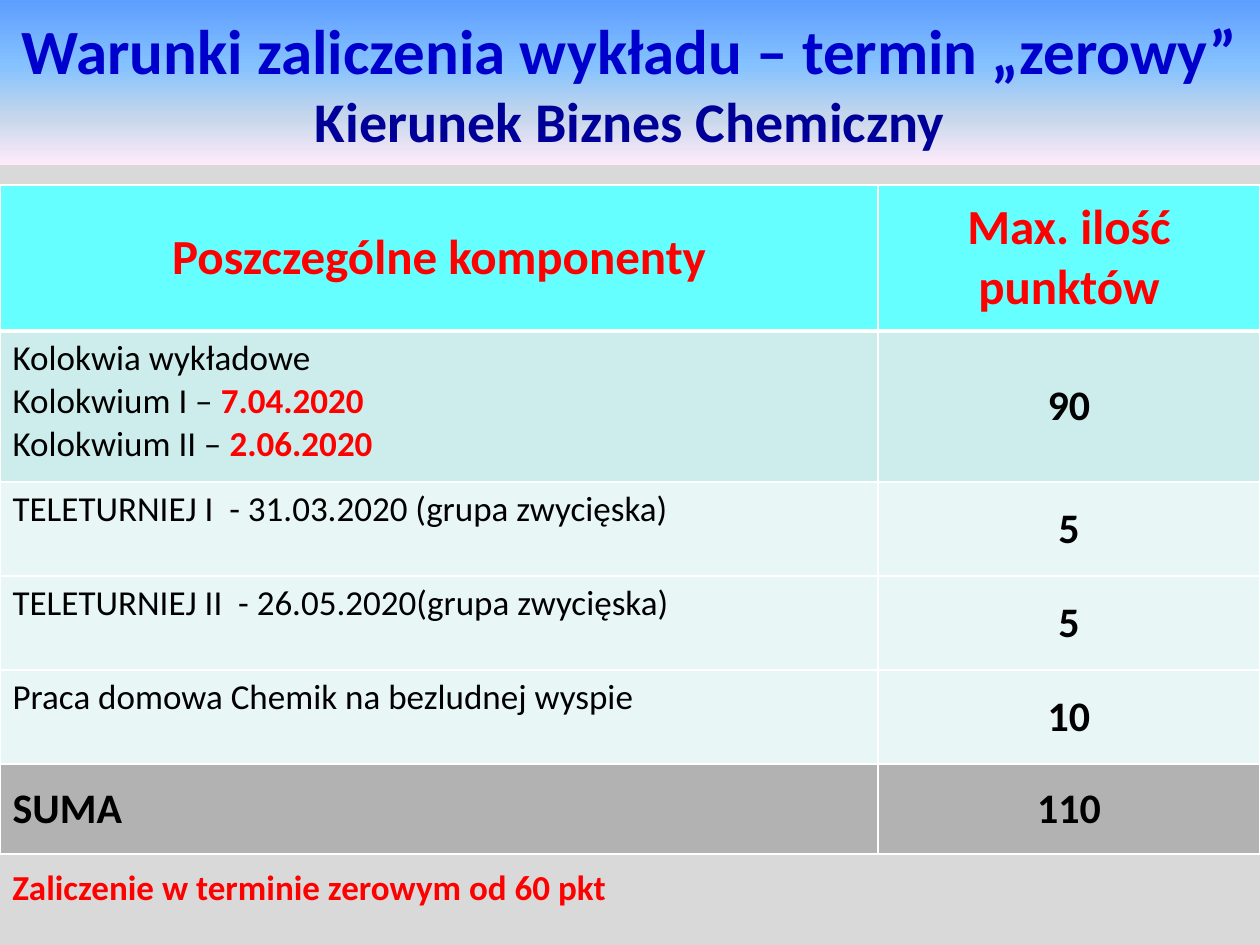
import pptx
import pptx.util
import pptx.dml.color
import pptx.enum.text
import pptx.oxml.ns
import lxml.etree

PX = 914400 // 126
HUES = {
    "back": "D9D9D9", "head": "66FFFF", "exam": "CDECEC", "quiz": "E8F6F6",
    "sum": "B2B2B2", "edge": "FFFFFF", "red": "FF0000", "black": "000000",
    "blue": "0000CC", "navy": "000099",
}
FADE = [(0, "5E9EFF"), (40, "85C2FF"), (70, "C4D6EB"), (100, "FFEBFA")]
MID = pptx.enum.text.MSO_ANCHOR.MIDDLE
TOP = pptx.enum.text.MSO_ANCHOR.TOP
LEFT = pptx.enum.text.PP_ALIGN.LEFT
CENTER = pptx.enum.text.PP_ALIGN.CENTER
rgb = pptx.dml.color.RGBColor.from_string
qn = pptx.oxml.ns.qn


def write(frame, lines, align):
    for i, line in enumerate(lines):
        para = frame.paragraphs[0] if i == 0 else frame.add_paragraph()
        para.alignment = align
        for text, size, hue, bold in line:
            run = para.add_run()
            run.text = text
            run.font.name = "Calibri"
            run.font.size = pptx.util.Pt(size)
            run.font.bold = bold
            run.font.color.rgb = rgb(HUES[hue])


def edge(cell, side, width):
    props = cell._tc.get_or_add_tcPr()
    line = lxml.etree.SubElement(props, qn("a:" + side), w=str(pptx.util.Pt(width)))
    fill = lxml.etree.SubElement(line, qn("a:solidFill"))
    lxml.etree.SubElement(fill, qn("a:srgbClr"), val=HUES["edge"])


deck = pptx.Presentation()
deck.slide_width = 1260 * PX
deck.slide_height = 945 * PX
slide = deck.slides.add_slide(deck.slide_layouts[5])
slide.background.fill.solid()
slide.background.fill.fore_color.rgb = rgb(HUES["back"])

rows = [
    (146, "head", MID, CENTER,
     [[("Poszczególne komponenty", 28, "red", True)]],
     ("Max. ilość punktów", 28, "red", True)),
    (151, "exam", TOP, LEFT,
     [[("Kolokwia wykładowe", 20, "black", False)],
      [("Kolokwium I – ", 20, "black", False), ("7.04.2020", 20, "red", True)],
      [("Kolokwium II – ", 20, "black", False), ("2.06.2020", 20, "red", True)]],
     ("90", 24, "black", True)),
    (94, "quiz", TOP, LEFT,
     [[("TELETURNIEJ I  - 31.03.2020 (grupa zwycięska)", 20, "black", False)]],
     ("5", 24, "black", True)),
    (94, "quiz", TOP, LEFT,
     [[("TELETURNIEJ II  - 26.05.2020(grupa zwycięska)", 20, "black", False)]],
     ("5", 24, "black", True)),
    (94, "quiz", TOP, LEFT,
     [[("Praca domowa Chemik na bezludnej wyspie", 20, "black", False)]],
     ("10", 24, "black", True)),
    (90, "sum", MID, LEFT,
     [[("SUMA", 24, "black", True)]],
     ("110", 24, "black", True)),
]
high = sum(row[0] for row in rows)
table = slide.shapes.add_table(len(rows), 2, 0, 185 * PX, 1260 * PX, high * PX).table
for col, wide in zip(table.columns, (878, 382)):
    col.width = wide * PX

for r, (tall, hue, anchor, align, parts, points) in enumerate(rows):
    table.rows[r].height = tall * PX
    sides = [(parts, anchor, align), ([[points]], MID, CENTER)]
    for c, (lines, hold, way) in enumerate(sides):
        cell = table.cell(r, c)
        for side in ("lnL", "lnR", "lnT", "lnB"):
            thick = (r, side) in ((0, "lnB"), (1, "lnT"))
            edge(cell, side, 3 if thick else 1)
        cell.fill.solid()
        cell.fill.fore_color.rgb = rgb(HUES[hue])
        cell.vertical_anchor = hold
        write(cell.text_frame, lines, way)

title = slide.shapes.title
title.left, title.top = 0, 0
title.width, title.height = 1260 * PX, 165 * PX
title.fill.gradient()
title.fill.gradient_angle = 270
stops = title._element.spPr.find(".//" + qn("a:gsLst"))
for stop in list(stops):
    stops.remove(stop)
for part, hue in FADE:
    stop = lxml.etree.SubElement(stops, qn("a:gs"), pos=str(part * 1000))
    lxml.etree.SubElement(stop, qn("a:srgbClr"), val=hue)
frame = title.text_frame
frame.word_wrap = True
frame.auto_size = pptx.enum.text.MSO_AUTO_SIZE.NONE
frame.vertical_anchor = MID
write(frame, [[("Warunki zaliczenia wykładu – termin „zerowy”", 36, "blue", True)],
              [("Kierunek Biznes Chemiczny", 32, "navy", True)]], CENTER)

note = slide.shapes.add_textbox(0, 859 * PX, 1216 * PX, 55 * PX).text_frame
note.word_wrap = True
note.auto_size = pptx.enum.text.MSO_AUTO_SIZE.SHAPE_TO_FIT_TEXT
write(note, [[("Zaliczenie w terminie zerowym od 60 pkt", 20, "red", True)]], LEFT)

deck.save("out.pptx")
